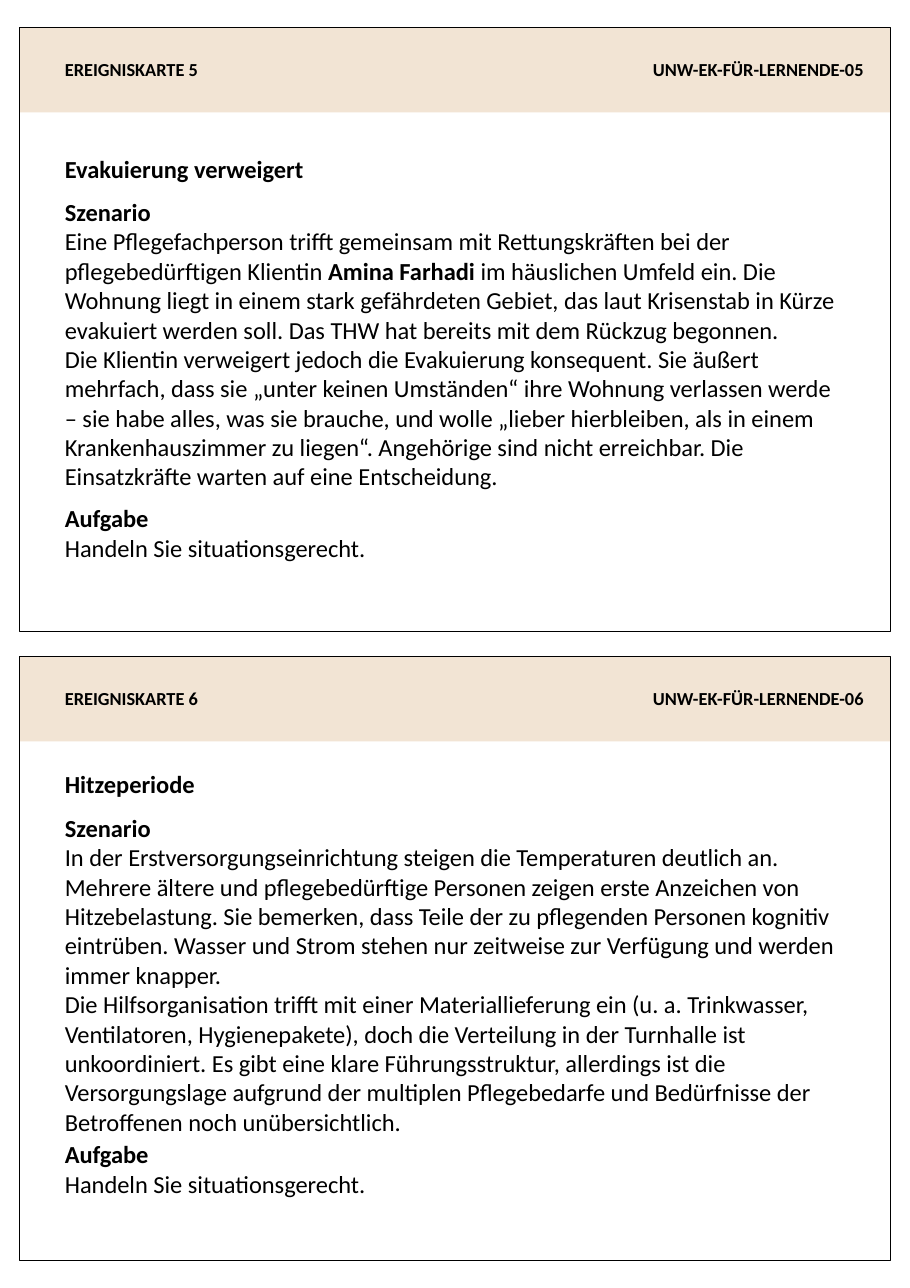
from pptx import Presentation
from pptx.dml.color import RGBColor
from pptx.enum.shapes import MSO_SHAPE
from pptx.enum.text import MSO_AUTO_SIZE, PP_ALIGN
from pptx.util import Emu, Pt

RECTANGLE = MSO_SHAPE.RECTANGLE
LEFT, RIGHT = PP_ALIGN.LEFT, PP_ALIGN.RIGHT
FIT_SHAPE = MSO_AUTO_SIZE.SHAPE_TO_FIT_TEXT

EMU_PER_PX = 9144  # 100 px to the inch
PAGE_WIDTH, PAGE_HEIGHT = 826, 1169
CARD_LEFT, CARD_TOP, CARD_STEP = 18, 25, 571
CARD_WIDTH, CARD_HEIGHT, BAND_HEIGHT = 790, 548, 77
TEXT_LEFT, TEXT_WIDTH, STORY_WIDTH = 49, 695, 725
CODE_LEFT, CODE_WIDTH = 463, 331
LABEL_OFFSET, LABEL_HEIGHT, TITLE_HEIGHT, TASK_HEIGHT = 23, 30, 37, 91
LABEL_SIZE, BODY_SIZE = 12, 16
COLOURS = {"band": "F2E4D4", "ink": "000000"}

# Each paragraph is a list of (text, bold) runs.
TASK = [[("Aufgabe", True)], [("Handeln Sie situationsgerecht.", False)]]
CARDS = [
    {
        "number": 5,
        "title": "Evakuierung verweigert",
        "tops": (135, 174, 452),
        "story_height": 279,
        "story": [
            [("Szenario", True)],
            [
                ("Eine Pflegefachperson trifft gemeinsam mit Rettungskräften bei der "
                 "pflegebedürftigen Klientin ", False),
                ("Amina Farhadi ", True),
                ("im häuslichen Umfeld ein. Die Wohnung liegt in einem stark gefährdeten "
                 "Gebiet, das laut Krisenstab in Kürze evakuiert werden soll. Das THW hat "
                 "bereits mit dem Rückzug begonnen.", False),
            ],
            [("Die Klientin verweigert jedoch die Evakuierung konsequent. Sie äußert "
              "mehrfach, dass sie „unter keinen Umständen“ ihre Wohnung verlassen werde "
              "– sie habe alles, was sie brauche, und wolle „lieber hierbleiben, als in "
              "einem Krankenhauszimmer zu liegen“. Angehörige sind nicht erreichbar. Die "
              "Einsatzkräfte warten auf eine Entscheidung.", False)],
        ],
    },
    {
        "number": 6,
        "title": "Hitzeperiode",
        "tops": (693, 733, 1029),
        "story_height": 333,
        "story": [
            [("Szenario", True)],
            [("In der Erstversorgungseinrichtung steigen die Temperaturen deutlich an. "
              "Mehrere ältere und pflegebedürftige Personen zeigen erste Anzeichen von "
              "Hitzebelastung. Sie bemerken, dass Teile der zu pflegenden Personen "
              "kognitiv eintrüben. Wasser und Strom stehen nur zeitweise zur Verfügung "
              "und werden immer knapper.", False)],
            [("Die Hilfsorganisation trifft mit einer Materiallieferung ein (u. a. "
              "Trinkwasser, Ventilatoren, Hygienepakete), doch die Verteilung in der "
              "Turnhalle ist unkoordiniert. Es gibt eine klare Führungsstruktur, "
              "allerdings ist die Versorgungslage aufgrund der multiplen Pflegebedarfe "
              "und Bedürfnisse der Betroffenen noch unübersichtlich.", False)],
        ],
    },
]


def px(*lengths):
    """Turn px lengths into EMU."""
    return [Emu(length * EMU_PER_PX) for length in lengths]


class CardPage:
    """Holds the text style and the page being filled."""

    def __init__(self, page, font="Calibri"):
        self.page = page
        self.font = font

    def rectangle(self, left, top, width, height, fill=None, line=None):
        shape = self.page.shapes.add_shape(RECTANGLE, *px(left, top, width, height))
        shape.shadow.inherit = False
        if fill:
            shape.fill.solid()
            shape.fill.fore_color.rgb = RGBColor.from_string(COLOURS[fill])
        else:
            shape.fill.background()
        if line:
            shape.line.color.rgb = RGBColor.from_string(COLOURS[line])
            shape.line.width = Pt(0.75)
        else:
            shape.line.fill.background()

    def text(self, left, top, width, height, paragraphs, size=BODY_SIZE, align=LEFT):
        box = self.page.shapes.add_textbox(*px(left, top, width, height))
        frame = box.text_frame
        frame.word_wrap = True
        frame.auto_size = FIT_SHAPE
        for index, spans in enumerate(paragraphs):
            para = frame.add_paragraph() if index else frame.paragraphs[0]
            para.alignment = align
            for words, bold in spans:
                span = para.add_run()
                span.text = words
                span.font.name = self.font
                span.font.size = Pt(size)
                span.font.bold = bold
                span.font.color.rgb = RGBColor.from_string(COLOURS["ink"])

    def card(self, top, card):
        number = card["number"]
        title_top, story_top, task_top = card["tops"]
        label_top = top + LABEL_OFFSET
        self.rectangle(CARD_LEFT, top, CARD_WIDTH, BAND_HEIGHT, fill="band")
        self.rectangle(CARD_LEFT, top, CARD_WIDTH, CARD_HEIGHT, line="ink")
        self.text(CODE_LEFT, label_top, CODE_WIDTH, LABEL_HEIGHT,
                  [[(f"UNW-EK-FÜR-LERNENDE-{number:02}", True)]], LABEL_SIZE, RIGHT)
        self.text(TEXT_LEFT, label_top, TEXT_WIDTH, LABEL_HEIGHT,
                  [[(f"EREIGNISKARTE {number}", True)]], LABEL_SIZE)
        self.text(TEXT_LEFT, title_top, TEXT_WIDTH, TITLE_HEIGHT, [[(card["title"], True)]])
        self.text(TEXT_LEFT, story_top, STORY_WIDTH, card["story_height"], card["story"])
        self.text(TEXT_LEFT, task_top, TEXT_WIDTH, TASK_HEIGHT, TASK)


def main():
    deck = Presentation()
    deck.slide_width, deck.slide_height = px(PAGE_WIDTH, PAGE_HEIGHT)
    card_page = CardPage(deck.slides.add_slide(deck.slide_layouts[6]))
    for index, card in enumerate(CARDS):
        card_page.card(CARD_TOP + index * CARD_STEP, card)
    deck.save("out.pptx")


if __name__ == "__main__":
    main()
